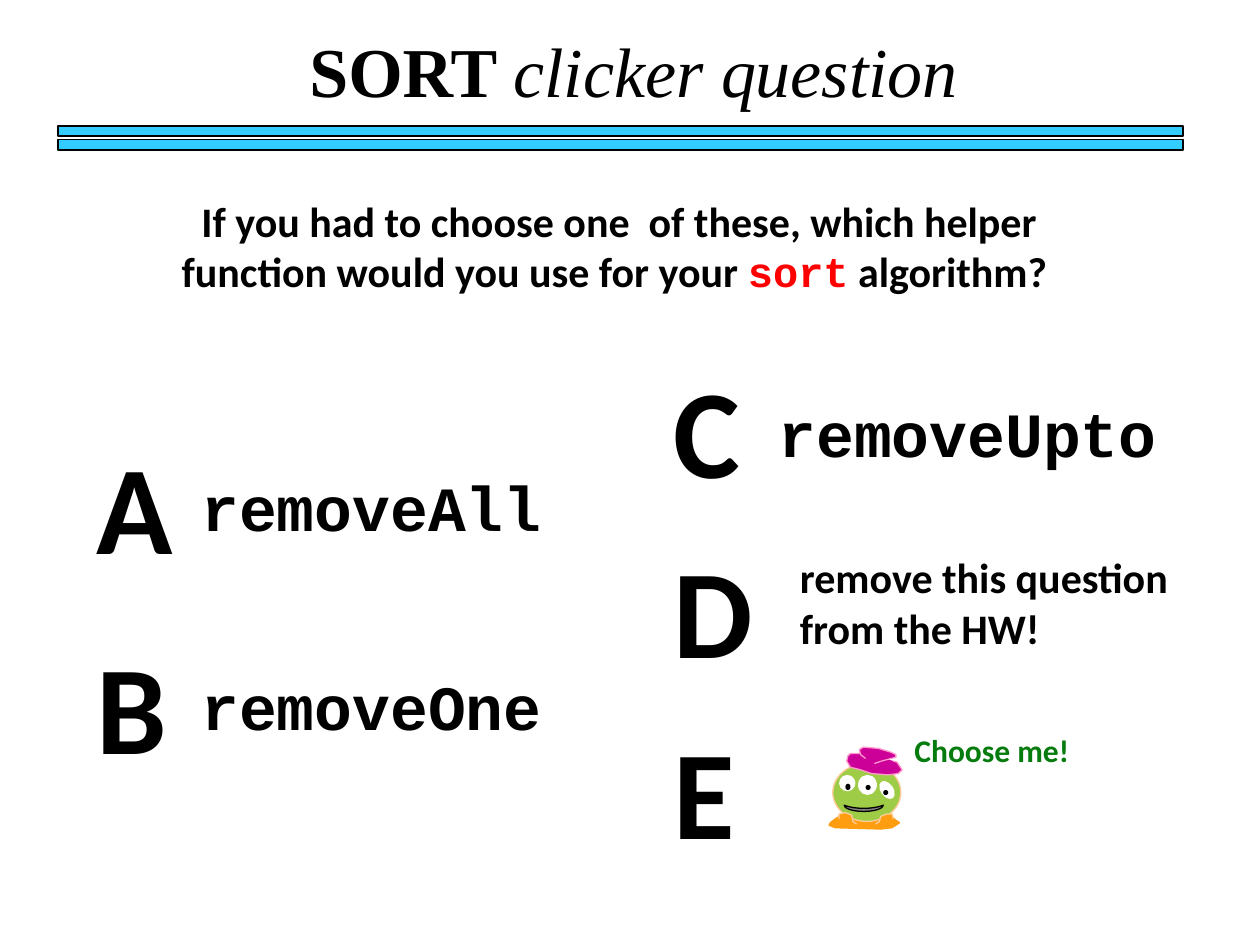
from pptx import Presentation
from pptx.dml.color import RGBColor
from pptx.enum.shapes import MSO_SHAPE
from pptx.enum.text import MSO_AUTO_SIZE, PP_ALIGN
from pptx.util import Inches, Pt

BLACK = RGBColor(0x00, 0x00, 0x00)
WHITE = RGBColor(0xFF, 0xFF, 0xFF)
RED = RGBColor(0xFF, 0x00, 0x00)
GREEN = RGBColor(0x06, 0x7B, 0x0E)
SKY = RGBColor(0x33, 0xCC, 0xFF)
LIME = RGBColor(0x9E, 0xCC, 0x46)
PEACH = RGBColor(0xFF, 0xCC, 0x99)
ORANGE = RGBColor(0xFD, 0x9D, 0x0F)
MAGENTA = RGBColor(0xCC, 0x00, 0x99)
PINK = RGBColor(0xFF, 0x99, 0xCC)
GRAY = RGBColor(0x80, 0x80, 0x80)

SANS, MONO, SERIF = "Calibri", "Courier New", "Times New Roman"

TITLE = [("SORT ", {"bold": True}), ("clicker question", {"italic": True})]
QUESTION = [
    ("If you had to choose one  of these, which helper function would you use for your ",
     {"name": SANS}),
    ("sort", {"name": MONO, "color": RED}),
    (" algorithm? ", {"name": SANS}),
]

LETTER_WIDTHS = {"A": 0.81, "B": 0.77, "C": 0.74, "D": 0.84, "E": 0.69}
LETTER_COLUMNS = [
    (0.67, 3.35, 1.59, "AB"),
    (5.25, 2.75, 1.43, "CDE"),
]
HELPERS = [
    ("removeAll", (1.5, 3.67, 2.93, 0.71)),
    ("removeOne", (1.5, 5.25, 2.93, 0.71)),
    ("removeUpto", (6.08, 3.08, 3.23, 0.71)),
]

FEET = [(6.87, 6.43), (6.94, 6.42), (7.07, 6.47), (7.11, 6.51), (7.14, 6.53),
        (7.08, 6.57), (6.99, 6.58), (6.63, 6.57), (6.58, 6.55), (6.59, 6.53),
        (6.63, 6.5), (6.69, 6.46), (6.73, 6.45), (6.79, 6.42), (6.85, 6.43)]
CAP_BRIM = [(6.86, 5.98), (6.75, 5.98), (6.73, 6), (6.72, 6.04), (6.75, 6.09),
            (6.83, 6.11), (6.92, 6.14), (7.05, 6.15), (7.13, 6.14), (7.16, 6.11),
            (7.14, 6.08), (7.12, 6.05), (7.09, 6.04)]
CAP_TOP = [(6.87, 6.02), (6.83, 5.99), (6.82, 5.95), (6.85, 5.93), (6.97, 5.94),
           (7.07, 5.97), (7.11, 5.99), (7.11, 6.01), (7, 6.04), (6.97, 6.05),
           (6.94, 6.06)]
LEFT_ARM = [(6.66, 6.5), (6.66, 6.46), (6.71, 6.45), (6.76, 6.47), (6.77, 6.52),
            (6.8, 6.54)]
RIGHT_ARM = [(7.09, 6.5), (7.08, 6.46), (7.04, 6.46), (6.99, 6.48), (6.98, 6.52),
             (6.95, 6.54)]
EYES = [((6.66, 6.15, 0.13, 0.13), 327.2), ((6.81, 6.15, 0.15, 0.16), 0),
        ((6.99, 6.19, 0.1, 0.16), 325.5)]
PUPILS = [(6.71, 6.22, 0.04, 0.05), (6.87, 6.23, 0.04, 0.04), (7.01, 6.27, 0.04, 0.04)]


def paint(shape, fill, line):
    shape.shadow.inherit = False
    if fill is None:
        shape.fill.background()
    else:
        shape.fill.solid()
        shape.fill.fore_color.rgb = fill
    if line is None:
        shape.line.fill.background()
    else:
        shape.line.color.rgb = line
        shape.line.width = Pt(0.75)


def add_preset(shapes, preset, box, fill, line=None, rotation=0):
    shape = shapes.add_shape(preset, *map(Inches, box))
    shape.rotation = rotation
    paint(shape, fill, line)


def add_outline(shapes, points, fill, line, closed=False):
    corners = [(Inches(x), Inches(y)) for x, y in points]
    builder = shapes.build_freeform(*corners[0], scale=1.0)
    builder.add_line_segments(corners[1:], close=closed)
    paint(builder.convert_to_shape(), fill, line)


def add_label(shapes, box, runs, size, font=None, bold=True, color=BLACK,
              wrap=False, align=PP_ALIGN.LEFT, before=0):
    frame = shapes.add_textbox(*map(Inches, box)).text_frame
    frame.word_wrap = wrap
    frame.auto_size = MSO_AUTO_SIZE.SHAPE_TO_FIT_TEXT
    paragraph = frame.paragraphs[0]
    paragraph.alignment = align
    paragraph.space_before = Pt(before)
    paragraph.font.size = Pt(size)
    paragraph.font.bold = bold
    paragraph.font.name = font
    paragraph.font.color.rgb = color
    for text, style in runs:
        run = paragraph.add_run()
        run.text = text
        for key, value in style.items():
            if key == "color":
                run.font.color.rgb = value
            else:
                setattr(run.font, key, value)


def add_alien(shapes):
    add_outline(shapes, FEET, ORANGE, ORANGE, closed=True)
    add_preset(shapes, MSO_SHAPE.OVAL, (6.61, 6.06, 0.54, 0.46), LIME, PEACH)
    for box, rotation in EYES:
        add_preset(shapes, MSO_SHAPE.OVAL, box, WHITE, rotation=rotation)
    for box in PUPILS:
        add_preset(shapes, MSO_SHAPE.OVAL, box, BLACK)
    add_preset(shapes, MSO_SHAPE.MOON, (6.83, 6.26, 0.05, 0.31), GRAY, BLACK, 270)
    for cap_part in (CAP_BRIM, CAP_TOP):
        add_outline(shapes, cap_part, MAGENTA, PINK)
    for arm in (LEFT_ARM, RIGHT_ARM):
        add_outline(shapes, arm, ORANGE, PEACH)


def main():
    deck = Presentation()
    deck.slide_width, deck.slide_height = Inches(10), Inches(7.5)
    shapes = deck.slides.add_slide(deck.slide_layouts[6]).shapes

    for top in (1, 1.11):
        add_preset(shapes, MSO_SHAPE.RECTANGLE, (0.46, top, 8.93, 0.08), SKY, BLACK)
    add_label(shapes, (1.07, 0.17, 7.92, 0.77), TITLE, 40, SERIF, bold=False,
              wrap=True, align=PP_ALIGN.CENTER, before=4)
    add_label(shapes, (1, 1.5, 7.83, 0.91), QUESTION, 24,
              wrap=True, align=PP_ALIGN.CENTER, before=2)

    for left, top, step, letters in LETTER_COLUMNS:
        for row, letter in enumerate(letters):
            box = (left, top + row * step, LETTER_WIDTHS[letter], 1.31)
            add_label(shapes, box, [(letter, {})], 72, SANS)
    for helper, box in HELPERS:
        add_label(shapes, box, [(helper, {})], 36, MONO)
    add_label(shapes, (6.25, 4.33, 3.17, 0.91),
              [("remove this question from the HW!", {})], 24, SANS, wrap=True)

    add_alien(shapes.add_group_shape().shapes)
    add_label(shapes, (7.16, 5.75, 1.44, 0.4), [("Choose me!", {})], 18, SANS, color=GREEN)
    deck.save("out.pptx")


if __name__ == "__main__":
    main()
